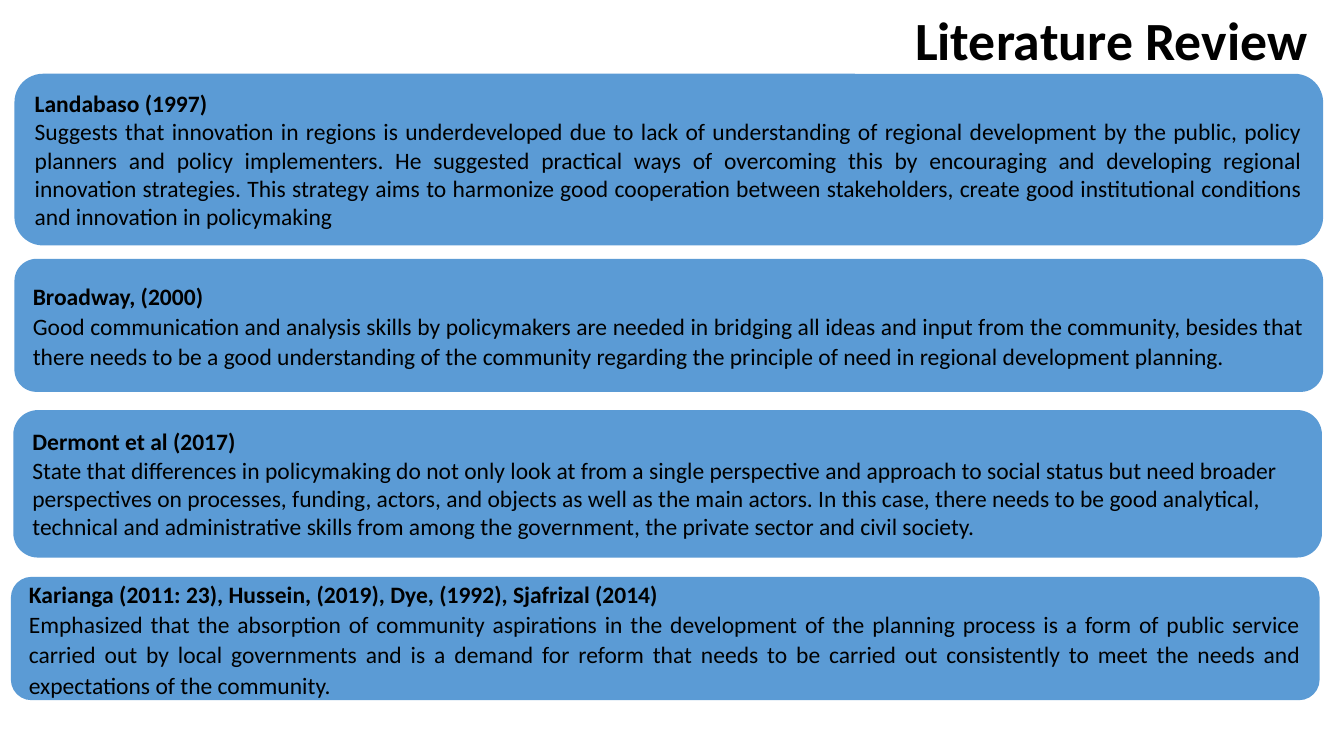
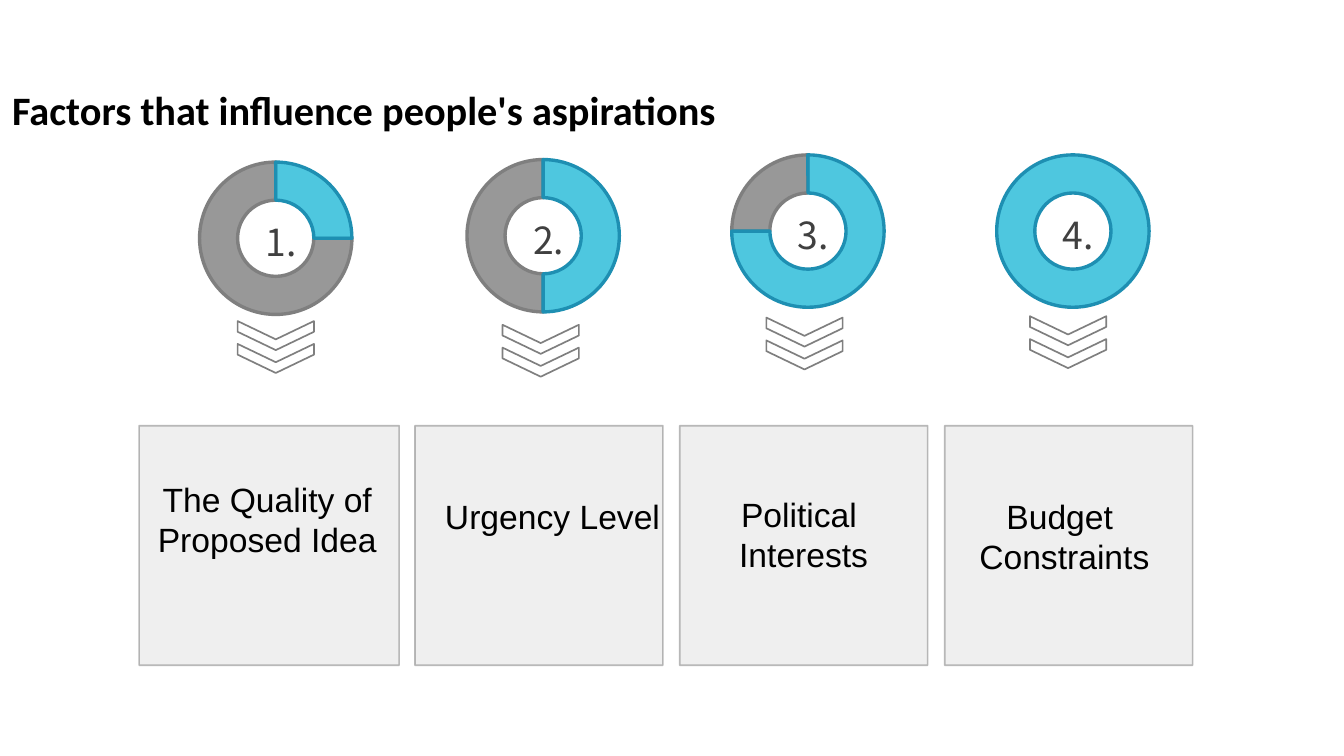
from dataclasses import dataclass, field
from typing import Any

from lxml import etree
from pptx import Presentation
from pptx import util as u
from pptx.dml import color, fill
from pptx.enum import shapes, text
from pptx.oxml import ns


@dataclass(frozen=True)
class Theme:
    card: str = "5B9BD5"
    grey: str = "7F7F7F"
    cyan: str = "22BAD8"
    cyan_edge: str = "1E8FB2"
    number: str = "404040"
    ink: str = "000000"
    heading_font: str = "Calibri"
    label_font: str = "Arial"
    number_font: str = "Noto Sans CJK SC"
    title_size: float = 32
    subtitle_size: float = 24
    card_size: float = 14
    label_size: float = 20
    number_size: float = 22.2


@dataclass(frozen=True)
class Box:
    left: float
    top: float
    width: float
    height: float

    def lengths(self) -> list[u.Length]:
        return [u.Pt(value) for value in (self.left, self.top, self.width, self.height)]


@dataclass(frozen=True)
class TextStyle:
    size: float
    font: str
    colour: str = "000000"
    bold: bool = False
    align: Any = text.PP_ALIGN.LEFT
    spacing: float = 1.0


@dataclass(frozen=True)
class Review:
    box: Box
    source: str
    finding: str
    paragraph: dict[str, Any] = field(default_factory=dict)


@dataclass(frozen=True)
class Factor:
    share: float
    ring_left: float
    ring_top: float
    chevron_left: float
    chevron_top: float
    panel_left: float
    panel_width: float
    label_box: Box
    label: tuple[str, ...]
    align: Any = text.PP_ALIGN.CENTER
    wrap: bool = True


THEME = Theme()
ALIGN = text.PP_ALIGN
SHAPE = shapes.MSO_SHAPE
RING_SIZE = 90.7
RING_START = 270
CARD_LEFT, CARD_WIDTH = 8.6, 779
JUSTIFIED = {"alignment": ALIGN.JUSTIFY}
JUSTIFIED_LOOSE = {"alignment": ALIGN.JUSTIFY, "line_spacing": 1.07}

REVIEWS = [
    Review(
        Box(CARD_LEFT, 43.9, CARD_WIDTH, 102.2),
        "Landabaso (1997) ",
        "Suggests that innovation in regions is underdeveloped due to lack of understanding of "
        "regional development by the public, policy planners and policy implementers. He suggested "
        "practical ways of overcoming this by encouraging and developing regional innovation "
        "strategies. This strategy aims to harmonize good cooperation between stakeholders, create "
        "good institutional conditions and innovation in policymaking",
        JUSTIFIED,
    ),
    Review(
        Box(CARD_LEFT, 154.1, CARD_WIDTH, 79.2),
        "Broadway, (2000)",
        "Good communication and analysis skills by policymakers are needed in bridging all ideas "
        "and input from the community, besides that there needs to be a good understanding of the "
        "community regarding the principle of need in regional development planning.",
        JUSTIFIED_LOOSE,
    ),
    Review(
        Box(7.9, 244.1, CARD_WIDTH, 87.8),
        "Dermont et al (2017)",
        "State that differences in policymaking do not only look at from a single perspective and "
        "approach to social status but need broader perspectives on processes, funding, actors, and "
        "objects as well as the main actors. In this case, there needs to be good analytical, "
        "technical and administrative skills from among the government, the private sector and "
        "civil society.",
        {"alignment": ALIGN.LEFT},
    ),
    Review(
        Box(6.5, 343.4, CARD_WIDTH, 73.4),
        "Karianga (2011: 23), Hussein, (2019), Dye, (1992), Sjafrizal (2014)",
        "Emphasized that the absorption of community aspirations in the development of the planning "
        "process is a form of public service carried out by local governments and is a demand for "
        "reform that needs to be carried out consistently to meet the needs and expectations of the "
        "community.",
        JUSTIFIED_LOOSE,
    ),
]

FACTORS = [
    Factor(0.25, 118.8, 96.5, 155.5, 177.1, 82.8, 154.8,
           Box(82.1, 281.5, 154.1, 55.4), ("The Quality of", "Proposed Idea")),
    Factor(0.5, 278, 95, 313.2, 179.3, 247, 147.6,
           Box(257.8, 291.6, 144, 31.7), ("Urgency Level",), ALIGN.LEFT, False),
    Factor(0.75, 435.6, 92.2, 470.2, 175, 404.6, 147.6,
           Box(411.1, 290.2, 134.6, 55.4), ("Political ", "Interests")),
    Factor(1, 593.3, 92.2, 627.1, 174.2, 562.3, 147.6,
           Box(564.5, 291.6, 138.2, 55.4), ("Budget ", "Constraints")),
]


def apply(target: Any, values: dict[str, Any]) -> None:
    for name, value in values.items():
        setattr(target, name, value)


def paint(target: fill.FillFormat, colour: str, opacity: int = 100) -> None:
    target.solid()
    target.fore_color.rgb = color.RGBColor.from_string(colour)
    if opacity < 100:
        for node in target._xPr.iter(ns.qn("a:srgbClr")):
            if node.get("val") == colour and node.getparent().getparent() is target._xPr:
                etree.SubElement(node, ns.qn("a:alpha"), val=str(opacity * 1000))


def write(paragraph: Any, words: str, style: TextStyle) -> None:
    apply(paragraph, {"alignment": style.align, "line_spacing": style.spacing,
                      "space_before": u.Pt(0)})
    run = paragraph.add_run()
    run.text = words
    apply(run.font, {"size": u.Pt(style.size), "name": style.font, "bold": style.bold})
    run.font.color.rgb = color.RGBColor.from_string(style.colour)


def fill_frame(frame: Any, lines: tuple[str, ...], style: TextStyle,
               anchor: Any = text.MSO_ANCHOR.TOP, wrap: bool = True) -> None:
    apply(frame, {"word_wrap": wrap, "auto_size": text.MSO_AUTO_SIZE.NONE,
                  "vertical_anchor": anchor})
    for index, words in enumerate(lines):
        paragraph = frame.add_paragraph() if index else frame.paragraphs[0]
        write(paragraph, words, style)


def add_shape(slide: Any, kind: Any, box: Box, colour: str | None = None, opacity: int = 100,
              edge: str | None = None, weight: float = 1, edge_opacity: int = 100) -> Any:
    shape = slide.shapes.add_shape(kind, *box.lengths())
    shape.shadow.inherit = False
    if colour:
        paint(shape.fill, colour, opacity)
    else:
        shape.fill.background()
    if edge:
        shape.line.width = u.Pt(weight)
        paint(shape.line.fill, edge, edge_opacity)
    else:
        shape.line.fill.background()
    return shape


def add_text(slide: Any, box: Box, lines: tuple[str, ...], style: TextStyle,
             **frame_options: Any) -> None:
    shape = slide.shapes.add_textbox(*box.lengths())
    fill_frame(shape.text_frame, lines, style, **frame_options)


def add_titled_slide(presentation: Any, title: str, box: Box, style: TextStyle) -> Any:
    slide = presentation.slides.add_slide(presentation.slide_layouts[5])
    shape = slide.shapes.title
    apply(shape, dict(zip(("left", "top", "width", "height"), box.lengths())))
    fill_frame(shape.text_frame, (title,), style)
    return slide


def add_review(slide: Any, review: Review) -> None:
    card = add_shape(slide, SHAPE.ROUNDED_RECTANGLE, review.box, THEME.card)
    frame = card.text_frame
    apply(frame, {"word_wrap": True, "vertical_anchor": text.MSO_ANCHOR.MIDDLE})
    for index, words in enumerate((review.source, review.finding)):
        paragraph = frame.add_paragraph() if index else frame.paragraphs[0]
        style = TextStyle(THEME.card_size, THEME.heading_font, THEME.ink, index == 0)
        write(paragraph, words, style)
        apply(paragraph, review.paragraph)


def add_ring(slide: Any, factor: Factor, number: int) -> None:
    box = Box(factor.ring_left, factor.ring_top, RING_SIZE, RING_SIZE)
    turn = (RING_START + 360 * factor.share) % 360
    if factor.share == 1:
        ring = add_shape(slide, SHAPE.DONUT, box, THEME.cyan, 80, THEME.cyan_edge, 2)
        ring.adjustments[0] = 0.25
    else:
        arcs = ((turn, RING_START, THEME.grey, THEME.grey),
                (RING_START, turn, THEME.cyan, THEME.cyan_edge))
        for start, end, colour, edge in arcs:
            arc = add_shape(slide, SHAPE.BLOCK_ARC, box, colour, 80, edge, 2)
            for index, value in enumerate((start * 0.6, end * 0.6, 0.25)):
                arc.adjustments[index] = value
    style = TextStyle(THEME.number_size, THEME.number_font, THEME.number, align=ALIGN.CENTER)
    add_text(slide, Box(box.left + 20.4, box.top + 30.5, 56.2, 33.8), (f"{number}.",), style,
             anchor=text.MSO_ANCHOR.MIDDLE)


def add_factor(slide: Any, factor: Factor, number: int) -> None:
    add_ring(slide, factor, number)
    for step in range(2):
        box = Box(factor.chevron_left, factor.chevron_top + 13.6 * step, 17.3, 45.4)
        chevron = add_shape(slide, SHAPE.CHEVRON, box, edge=THEME.grey)
        chevron.rotation = 90
        chevron.adjustments[0] = 0.63
    add_shape(slide, SHAPE.RECTANGLE, Box(factor.panel_left, 253.4, factor.panel_width, 142.6),
              THEME.grey, 10 + 2, THEME.grey, 1, 53)
    style = TextStyle(THEME.label_size, THEME.label_font, THEME.ink, align=factor.align)
    add_text(slide, factor.label_box, factor.label, style, wrap=factor.wrap)


def main() -> None:
    presentation = Presentation()
    apply(presentation, {"slide_width": u.Pt(800), "slide_height": u.Pt(450)})

    review_slide = add_titled_slide(
        presentation, "Literature Review", Box(505.4, -7.2, 280.1, 50.4),
        TextStyle(THEME.title_size, THEME.heading_font, THEME.ink, True, ALIGN.RIGHT, 1.2))
    for review in REVIEWS:
        add_review(review_slide, review)

    factor_slide = add_titled_slide(
        presentation, "Factors that influence people's aspirations", Box(0, 50.4, 452.2, 33.1),
        TextStyle(THEME.subtitle_size, THEME.heading_font, THEME.ink, True, spacing=0.9))
    for number, factor in enumerate(FACTORS, start=1):
        add_factor(factor_slide, factor, number)

    presentation.save("out.pptx")


if __name__ == "__main__":
    main()
